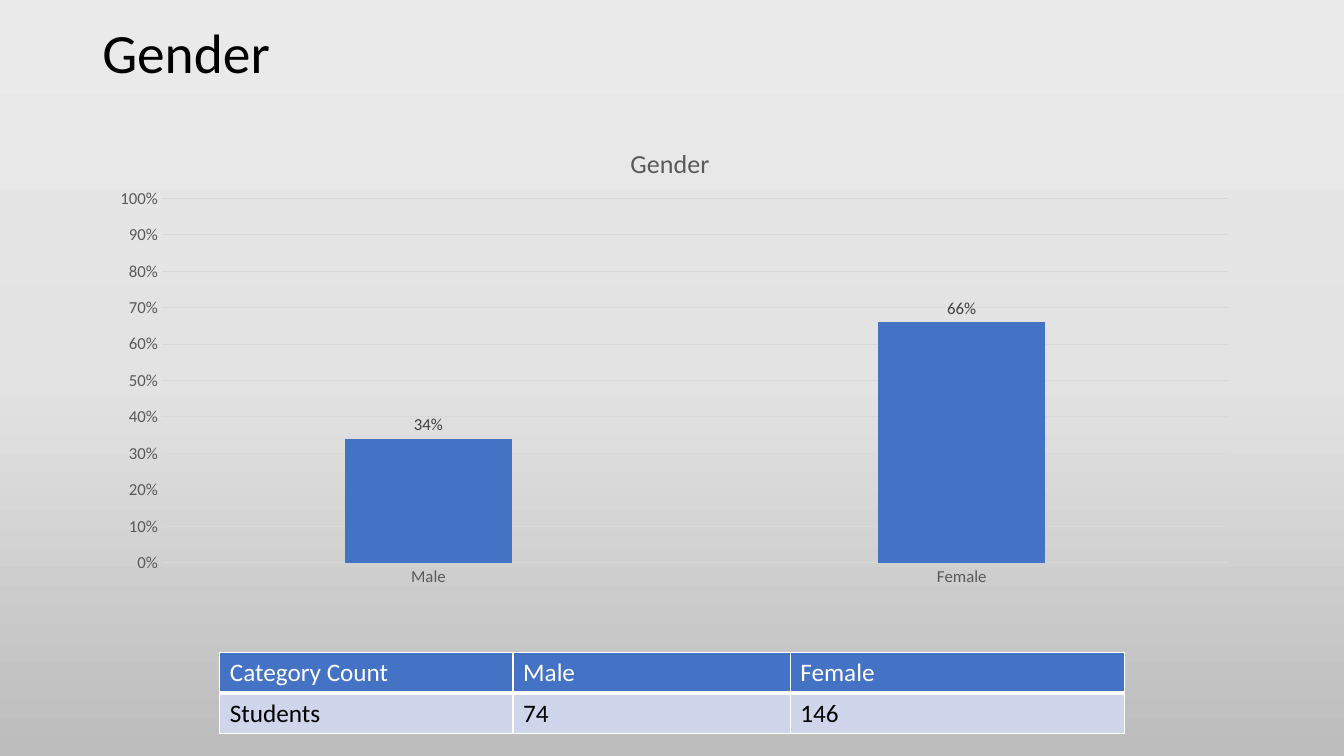
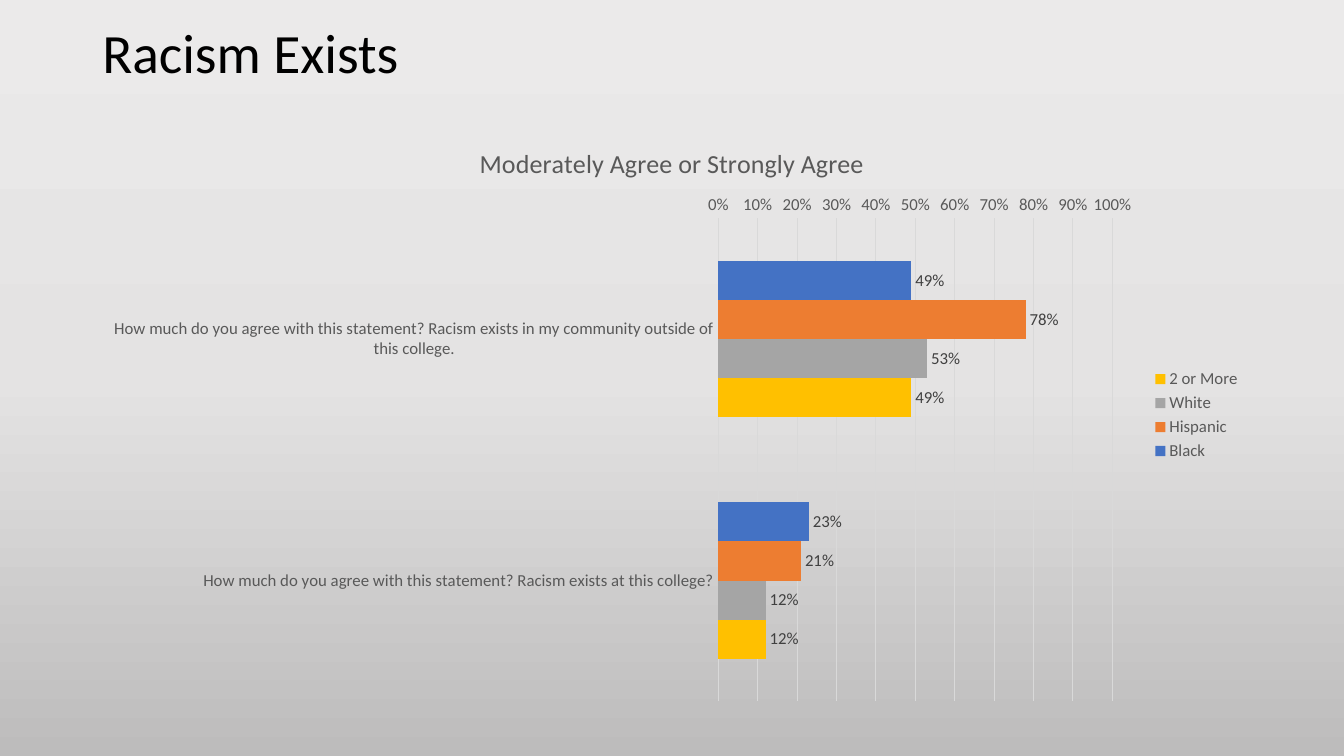
from copy import deepcopy

from lxml.etree import SubElement
from pptx import Presentation
from pptx.chart.data import CategoryChartData
from pptx.dml.color import RGBColor
from pptx.enum.chart import XL_CHART_TYPE, XL_LABEL_POSITION, XL_LEGEND_POSITION, XL_TICK_MARK
from pptx.enum.text import MSO_ANCHOR
from pptx.oxml import parse_xml
from pptx.oxml.ns import nsdecls, qn
from pptx.util import Pt

FONT = "Calibri"
COLORS = {
    "black": "000000", "white": "FFFFFF", "axis": "595959", "label": "404040",
    "grid": "D9D9D9", "blue": "4472C4", "orange": "ED7D31", "gray": "A5A5A5",
    "yellow": "FFC000", "row": "CFD5EA",
}
BACKGROUND = [(0, "EBEAEA"), (0.5, "E4E3E3"), (1, "BDBCBC")]
LEFT, WIDTH = 66, 828
TITLE_TOP, TITLE_HEIGHT = 16, 48
CHART_TOP = 83.5

SLIDES = [
    {
        "title": "Gender",
        "chart": {
            "type": XL_CHART_TYPE.COLUMN_CLUSTERED,
            "height": 342.5,
            "title": "Gender",
            "title_at": (0.46, 0.05),
            "plot_at": (0.06, 0.17, 0.92, 0.76),
            "overlap": -27,
            "categories": ["Male", "Female"],
            "series": [("Series 1", [0.34, 0.66], "blue")],
        },
        "table": {
            "left": 157, "top": 466, "row_height": 29,
            "columns": [209.5, 198, 239],
            "rows": [["Category Count", "Male", "Female"], ["Students", "74", "146"]],
        },
    },
    {
        "title": "Racism Exists",
        "chart": {
            "type": XL_CHART_TYPE.BAR_CLUSTERED,
            "height": 426,
            "title": "Moderately Agree or Strongly Agree",
            "title_at": (0.33, 0.04),
            "plot_at": (0.54, 0.17, 0.34, 0.81),
            "overlap": 0,
            "reverse": True,
            "categories": [
                "How much do you agree with this statement? Racism exists in my community outside of this college.",
                "How much do you agree with this statement? Racism exists at this college?",
            ],
            "series": [
                ("Black", [0.49, 0.23], "blue"),
                ("Hispanic", [0.78, 0.21], "orange"),
                ("White", [0.53, 0.12], "gray"),
                ("2 or More", [0.49, 0.12], "yellow"),
            ],
        },
    },
]


def rgb(name):
    return RGBColor.from_string(COLORS[name])


def style_font(font, size, color):
    font.name, font.size, font.bold = FONT, Pt(size), False
    font.color.rgb = rgb(color)


def set_background(master):
    fill = master.background.fill
    fill.gradient()
    fill.gradient_angle = 270
    stops = master.element.xpath("./p:cSld/p:bg//a:gsLst")[0]
    stops.insert(1, deepcopy(stops[0]))
    for stop, (position, color) in zip(fill.gradient_stops, BACKGROUND):
        stop.position = position
        stop.color.rgb = RGBColor.from_string(color)


def add_title(slide, text):
    tf = slide.shapes.add_textbox(Pt(LEFT), Pt(TITLE_TOP), Pt(WIDTH), Pt(TITLE_HEIGHT)).text_frame
    tf.word_wrap = True
    tf.vertical_anchor = MSO_ANCHOR.MIDDLE
    tf.text = text
    p = tf.paragraphs[0]
    p.line_spacing = 0.9
    style_font(p.runs[0].font, 39.6, "black")


def set_layout(parent, after, values, inner=False):
    for old in parent.findall(qn("c:layout")):
        parent.remove(old)
    layout = parse_xml(f"<c:layout {nsdecls('c')}><c:manualLayout/></c:layout>")
    settings = [("layoutTarget", "inner")] if inner else []
    settings += [("xMode", "edge"), ("yMode", "edge")]
    settings += zip("xywh", values)
    for tag, value in settings:
        SubElement(layout[0], qn(f"c:{tag}")).set("val", str(value))
    if after is None:
        parent.insert(0, layout)
    else:
        after.addnext(layout)


def style_axis(axis):
    axis.major_tick_mark = axis.minor_tick_mark = XL_TICK_MARK.NONE
    style_font(axis.tick_labels.font, 12, "axis")


def style_line(line):
    line.color.rgb = rgb("grid")
    line.width = Pt(0.75)


def add_chart(slide, spec):
    data = CategoryChartData(number_format="0%")
    data.categories = spec["categories"]
    for name, values, _ in spec["series"]:
        data.add_series(name, values)
    chart = slide.shapes.add_chart(
        spec["type"], Pt(LEFT), Pt(CHART_TOP), Pt(WIDTH), Pt(spec["height"]), data).chart
    style_font(chart.font, 10, "black")

    chart.has_title = True
    title = chart.chart_title
    title.text_frame.text = spec["title"]
    style_font(title.text_frame.paragraphs[0].runs[0].font, 18.6, "axis")
    title.include_in_layout = False
    title_xml = chart.element.xpath("./c:chart/c:title")[0]
    set_layout(title_xml, title_xml.find(qn("c:tx")), spec["title_at"])
    set_layout(chart.element.xpath(".//c:plotArea")[0], None, spec["plot_at"], inner=True)

    category, value = chart.category_axis, chart.value_axis
    style_axis(category)
    style_axis(value)
    style_line(category.format.line)
    category.reverse_order = spec.get("reverse", False)
    value.format.line.fill.background()
    value.minimum_scale, value.maximum_scale, value.major_unit = 0, 1, 0.1
    value.tick_labels.number_format = "0%"
    value.tick_labels.number_format_is_linked = False
    style_line(value.major_gridlines.format.line)

    plot = chart.plots[0]
    plot.gap_width, plot.overlap = 219, spec["overlap"]
    plot.vary_by_categories = False
    for series, (_, _, color) in zip(plot.series, spec["series"]):
        series.format.fill.solid()
        series.format.fill.fore_color.rgb = rgb(color)
        labels = series.data_labels
        labels.show_value = True
        labels.number_format, labels.number_format_is_linked = "0%", False
        labels.position = XL_LABEL_POSITION.OUTSIDE_END
        style_font(labels.font, 12, "label")

    chart.has_legend = len(spec["series"]) > 1
    if chart.has_legend:
        chart.legend.position = XL_LEGEND_POSITION.RIGHT
        chart.legend.include_in_layout = False
        style_font(chart.legend.font, 12, "axis")


def set_borders(cell, bottom):
    tc_pr = cell._tc.get_or_add_tcPr()
    for side, width in zip("LRTB", (1, 1, 1, bottom)):
        tc_pr.append(parse_xml(
            f'<a:ln{side} {nsdecls("a")} w="{Pt(width)}"><a:solidFill>'
            f'<a:srgbClr val="{COLORS["white"]}"/></a:solidFill></a:ln{side}>'))


def add_table(slide, spec):
    rows, columns, height = spec["rows"], spec["columns"], spec["row_height"]
    table = slide.shapes.add_table(
        len(rows), len(columns), Pt(spec["left"]), Pt(spec["top"]),
        Pt(sum(columns)), Pt(height * len(rows))).table
    table.horz_banding = False
    for column, width in zip(table.columns, columns):
        column.width = Pt(width)
    for i, texts in enumerate(rows):
        fill, color, bottom = ("row", "black", 1) if i else ("blue", "white", 3)
        for j, text in enumerate(texts):
            cell = table.cell(i, j)
            set_borders(cell, bottom)
            cell.fill.solid()
            cell.fill.fore_color.rgb = rgb(fill)
            cell.text = text
            style_font(cell.text_frame.paragraphs[0].runs[0].font, 18, color)


def main():
    prs = Presentation()
    prs.slide_width, prs.slide_height = Pt(960), Pt(540)
    set_background(prs.slide_master)
    for content in SLIDES:
        slide = prs.slides.add_slide(prs.slide_layouts[6])
        add_title(slide, content["title"])
        add_chart(slide, content["chart"])
        if "table" in content:
            add_table(slide, content["table"])
    prs.save("out.pptx")


if __name__ == "__main__":
    main()
